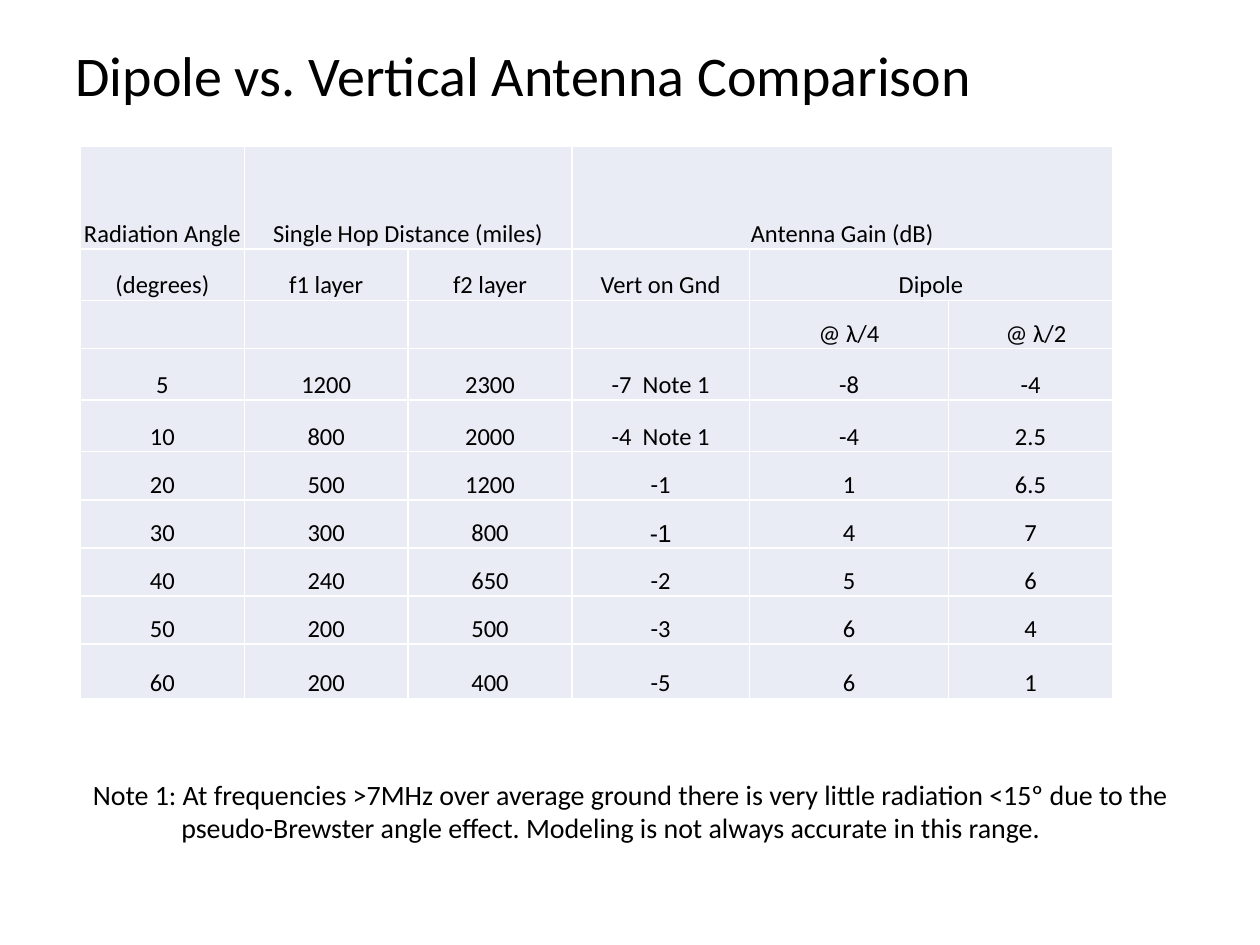
from dataclasses import dataclass

from lxml import etree
from pptx import Presentation
from pptx.dml.color import RGBColor
from pptx.enum.text import MSO_ANCHOR, PP_ALIGN
from pptx.oxml.ns import qn
from pptx.util import Pt

MIDDLE, BOTTOM = MSO_ANCHOR.MIDDLE, MSO_ANCHOR.BOTTOM
CENTER = PP_ALIGN.CENTER


@dataclass(frozen=True)
class Theme:
    font: str = "Calibri"
    alternate_font: str = "Arial"
    ink: str = "000000"
    cell: str = "E9EBF5"
    border: str = "FFFFFF"
    title_size: int = 32
    note_size: int = 16
    table_size: int = 14


THEME = Theme()

TITLE = "Dipole vs. Vertical Antenna Comparison"
NOTE = [
    "Note 1: At frequencies >7MHz over average ground there is very little radiation <15º due to the",
    "pseudo-Brewster angle effect. Modeling is not always accurate in this range.",
]
ROWS = [
    ["Radiation Angle", "Single Hop Distance (miles)", "", "Antenna Gain (dB)", "", ""],
    ["(degrees)", "f1 layer", "f2 layer", "Vert on Gnd", "Dipole", ""],
    ["", "", "", "", "@ λ/4", "@ λ/2"],
    ["5", "1200", "2300", "-7  Note 1", "-8", "-4"],
    ["10", "800", "2000", "-4  Note 1", "-4", "2.5"],
    ["20", "500", "1200", "-1", "1", "6.5"],
    ["30", "300", "800", "-1", "4", "7"],
    ["40", "240", "650", "-2", "5", "6"],
    ["50", "200", "500", "-3", "6", "4"],
    ["60", "200", "400", "-5", "6", "1"],
]
MERGES = [((0, 1), (0, 2)), ((0, 3), (0, 5)), ((1, 4), (1, 5))]
COLUMN_WIDTHS = [93.6, 93.6, 93.6, 101.5, 113.8, 93.6]
ROW_HEIGHTS = [58.4, 29.5, 27.5, 29.5, 29.5, 27.5, 27.5, 27.5, 27.5, 31]
HALF_WAVE_CELL = (2, 5)
ALTERNATE_FONT_CELL = (6, 3)


def style_font(font, size):
    font.name = THEME.font
    font.size = Pt(size)
    font.color.rgb = RGBColor.from_string(THEME.ink)


def add_text(slide, box, lines, size):
    frame = slide.shapes.add_textbox(*map(Pt, box)).text_frame
    frame.word_wrap = True
    frame.text = "\n".join(lines)
    for paragraph in frame.paragraphs:
        style_font(paragraph.runs[0].font, size)
    return frame


def add_title(slide, box):
    frame = add_text(slide, box, [TITLE], THEME.title_size)
    frame.vertical_anchor = MIDDLE
    frame.paragraphs[0].line_spacing = 0.9


def add_note(slide, box):
    frame = add_text(slide, box, NOTE, THEME.note_size)
    # Second line hangs under the note's wording
    frame.paragraphs[1]._p.get_or_add_pPr().set("marL", str(Pt(50.5)))


def add_borders(cell):
    properties = cell._tc.get_or_add_tcPr()
    for position, side in enumerate(("lnL", "lnR", "lnT", "lnB")):
        line = etree.Element(qn(f"a:{side}"), w=str(Pt(1)))
        fill = etree.SubElement(line, qn("a:solidFill"))
        etree.SubElement(fill, qn("a:srgbClr"), val=THEME.border)
        properties.insert(position, line)


def style_cell(cell, text):
    cell.margin_left = cell.margin_right = cell.margin_top = Pt(0.75)
    cell.margin_bottom = Pt(0)
    cell.vertical_anchor = BOTTOM
    cell.fill.solid()
    cell.fill.fore_color.rgb = RGBColor.from_string(THEME.cell)
    add_borders(cell)
    cell.text = text
    paragraph = cell.text_frame.paragraphs[0]
    paragraph.alignment = CENTER
    style_font(paragraph.font, THEME.table_size)
    for run in paragraph.runs:
        style_font(run.font, THEME.table_size)


def add_comparison(slide, box):
    table = slide.shapes.add_table(len(ROWS), len(COLUMN_WIDTHS), *map(Pt, box)).table
    table.first_row = table.horz_banding = False
    for column, width in zip(table.columns, COLUMN_WIDTHS):
        column.width = Pt(width)
    for row, height in zip(table.rows, ROW_HEIGHTS):
        row.height = Pt(height)

    for r, values in enumerate(ROWS):
        for c, value in enumerate(values):
            style_cell(table.cell(r, c), value)
    for first, last in MERGES:
        table.cell(*first).merge(table.cell(*last))

    # Exceptions to the common cell style
    table.cell(*HALF_WAVE_CELL).margin_left = Pt(7)
    reading = table.cell(*ALTERNATE_FONT_CELL).text_frame.paragraphs[0].runs[0]
    reading.font.name = THEME.alternate_font


def main():
    deck = Presentation()
    deck.slide_width, deck.slide_height = Pt(720), Pt(540)
    slide = deck.slides.add_slide(deck.slide_layouts[6])
    add_title(slide, (36, 21.6, 648, 46.8))
    add_note(slide, (46, 440.6, 641.5, 46))
    add_comparison(slide, (46, 83.8, sum(COLUMN_WIDTHS), sum(ROW_HEIGHTS)))
    deck.save("out.pptx")


if __name__ == "__main__":
    main()
